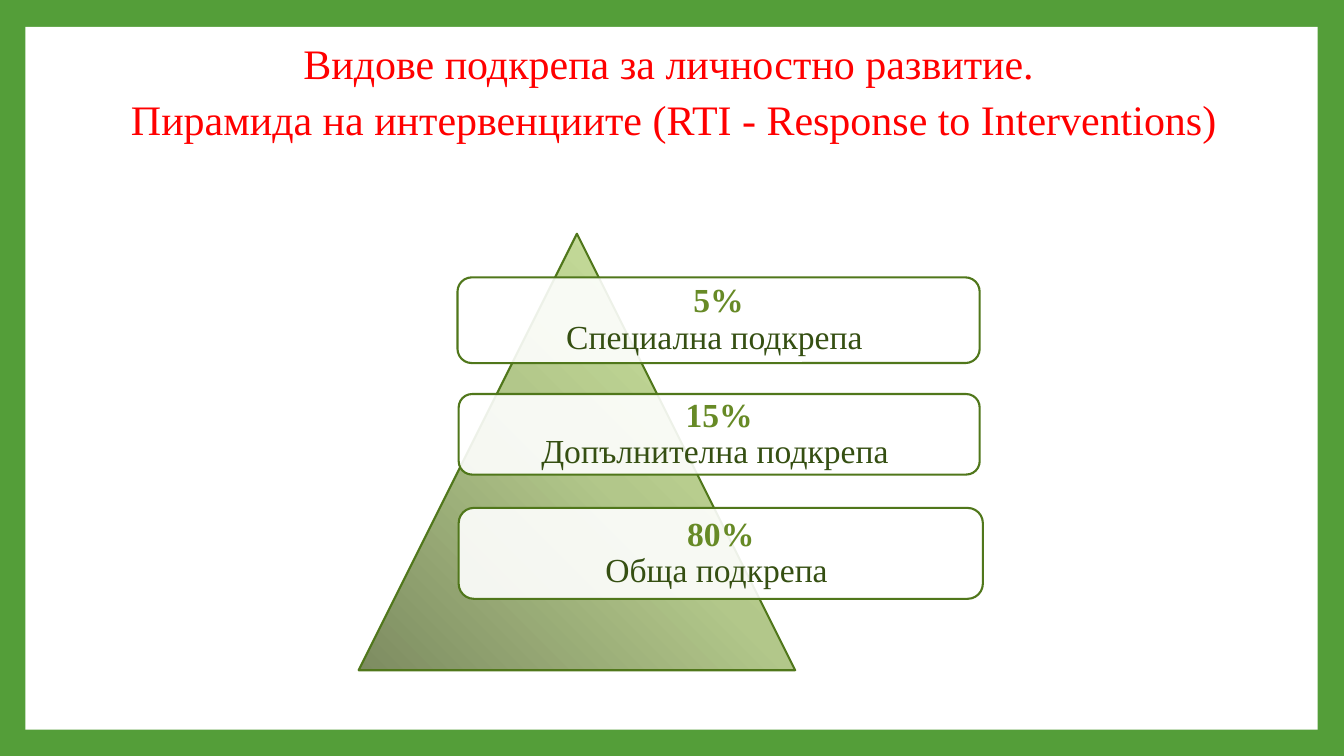
from pptx import Presentation
from pptx.dml.color import RGBColor
from pptx.enum.shapes import MSO_SHAPE
from pptx.enum.text import MSO_ANCHOR, MSO_AUTO_SIZE, PP_ALIGN
from pptx.oxml import parse_xml
from pptx.oxml.ns import nsdecls, qn
from pptx.util import Cm, Pt
from lxml.etree import SubElement

FONT = "Times New Roman"
COLORS = {
    "frame": "549E39",
    "panel": "FFFFFF",
    "heading": "FF0000",
    "outline": "50771B",
    "share": "678A26",
    "support": "354F12",
    "pyramid_dark": "7D8C61",
    "pyramid_mid": "B2C78A",
    "pyramid_light": "D3ECA4",
}
HEADING = (
    "Видове подкрепа за личностно развитие. \v"
    "Пирамида на интервенциите (RTI - Response to Interventions)"
)
LEVELS = [
    ("5%", "Специална подкрепа ", 2.49, 1.1, 13.16, 2.16),
    ("15%", "Допълнителна подкрепа ", 2.52, 4.04, 13.13, 2.03),
    ("80%", "Обща подкрепа ", 2.52, 6.91, 13.21, 2.29),
]


def color(name):
    return RGBColor.from_string(COLORS[name])


def add_outlined(shapes, preset, left, top, width, height):
    outlined = shapes.add_shape(preset, Cm(left), Cm(top), Cm(width), Cm(height))
    outlined.shadow.inherit = False
    outlined.line.color.rgb = color("outline")
    outlined.line.width = Pt(1.5)
    return outlined


def fill_from_corner(pyramid):
    stops = zip((0, 50000, 100000), ("pyramid_dark", "pyramid_mid", "pyramid_light"))
    stop_xml = "".join(
        f'<a:gs pos="{pos}"><a:srgbClr val="{COLORS[name]}"/></a:gs>' for pos, name in stops
    )
    gradient = parse_xml(
        f'<a:gradFill {nsdecls("a")} rotWithShape="1"><a:gsLst>{stop_xml}</a:gsLst>'
        '<a:path path="circle"><a:fillToRect t="100000" r="100000"/></a:path></a:gradFill>'
    )
    pyramid.fill.gradient()
    properties = pyramid.element.spPr
    properties.replace(properties.find(qn("a:gradFill")), gradient)


def add_frame(slide, left, top, width, height):
    slide.background.fill.solid()
    slide.background.fill.fore_color.rgb = color("frame")
    panel = slide.shapes.add_shape(
        MSO_SHAPE.RECTANGLE, Cm(left), Cm(top), Cm(width), Cm(height)
    )
    panel.shadow.inherit = False
    panel.fill.solid()
    panel.fill.fore_color.rgb = color("panel")
    panel.line.fill.background()
    slide.shapes.title.element.addprevious(panel.element)


def add_heading(slide, left, top, width, height):
    heading = slide.shapes.title
    heading.left, heading.top = Cm(left), Cm(top)
    heading.width, heading.height = Cm(width), Cm(height)
    frame = heading.text_frame
    frame.text = HEADING
    frame.word_wrap = True
    frame.auto_size = MSO_AUTO_SIZE.NONE
    frame.vertical_anchor = MSO_ANCHOR.MIDDLE
    paragraph = frame.paragraphs[0]
    paragraph.alignment = PP_ALIGN.CENTER
    paragraph.line_spacing = 1.1
    paragraph.font.name = FONT
    paragraph.font.size = Pt(30)
    paragraph.font.color.rgb = color("heading")


def add_level(shapes, share, support, left, top, width, height):
    level = add_outlined(shapes, MSO_SHAPE.ROUNDED_RECTANGLE, left, top, width, height)
    level.fill.solid()
    level.fill.fore_color.rgb = color("panel")
    tint = level.element.spPr.find(qn("a:solidFill"))[0]
    SubElement(tint, qn("a:alpha")).set("val", "90000")
    frame = level.text_frame
    frame.word_wrap = True
    frame.vertical_anchor = MSO_ANCHOR.MIDDLE
    frame.margin_top = frame.margin_bottom = Cm(0.1)
    lines = [(share, "share", True), (support, "support", False)]
    for index, (wording, tone, bold) in enumerate(lines):
        paragraph = frame.add_paragraph() if index else frame.paragraphs[0]
        paragraph.text = wording
        paragraph.alignment = PP_ALIGN.CENTER
        paragraph.line_spacing = 0.9
        paragraph.font.name = FONT
        paragraph.font.size = Pt(24)
        paragraph.font.bold = bold
        paragraph.font.color.rgb = color(tone)


def add_support_pyramid(slide, left, top, side):
    shapes = slide.shapes.add_group_shape().shapes
    pyramid = add_outlined(shapes, MSO_SHAPE.ISOSCELES_TRIANGLE, left, top, side, side)
    fill_from_corner(pyramid)
    for share, support, across, down, width, height in LEVELS:
        add_level(shapes, share, support, left + across, top + down, width, height)


def main():
    presentation = Presentation()
    presentation.slide_width = Cm(33.87)
    presentation.slide_height = Cm(19.05)
    slide = presentation.slides.add_slide(presentation.slide_layouts[5])
    add_frame(slide, 0.64, 0.68, 32.57, 17.71)
    add_heading(slide, 1.7, 0.89, 30.58, 2.67)
    add_support_pyramid(slide, 9.04, 5.89, 11)
    presentation.save("out.pptx")


if __name__ == "__main__":
    main()
